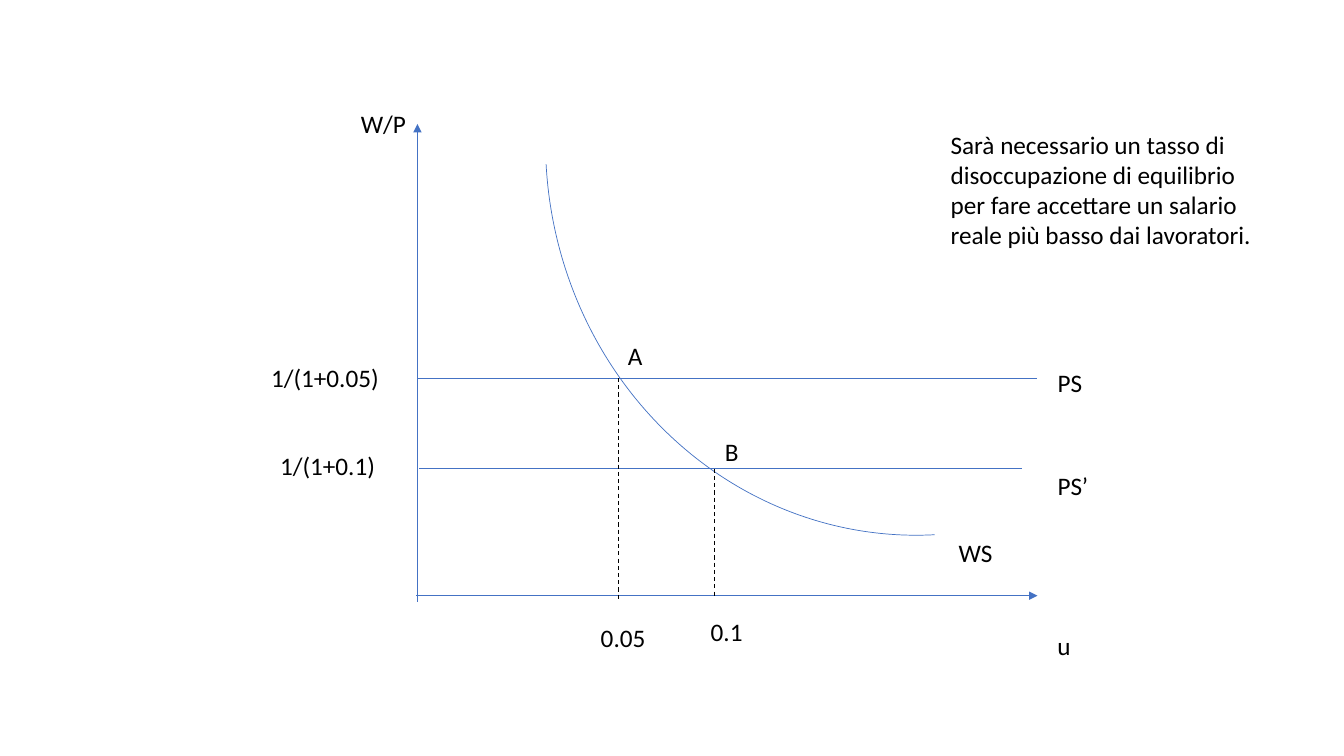
from dataclasses import dataclass

from lxml import etree
from pptx import Presentation
from pptx.dml.color import RGBColor
from pptx.enum.dml import MSO_LINE
from pptx.enum.shapes import MSO_CONNECTOR, MSO_SHAPE
from pptx.enum.text import MSO_AUTO_SIZE, PP_ALIGN
from pptx.oxml.ns import qn
from pptx.util import Pt

EMU_PER_PX = 9144
BLANK_LAYOUT = 6
STRAIGHT = MSO_CONNECTOR.STRAIGHT
ARC = MSO_SHAPE.ARC
DASH = MSO_LINE.DASH
FIT_TEXT = MSO_AUTO_SIZE.SHAPE_TO_FIT_TEXT
LEFT = PP_ALIGN.LEFT


@dataclass(frozen=True)
class Theme:
    font: str = "Calibri"
    text_size: float = 18
    text_color: str = "000000"
    curve_color: str = "4472C4"
    curve_width: float = 0.5
    guide_color: str = "000000"
    guide_width: float = 0.75


THEME = Theme()

AXIS_X, AXIS_Y = 414, 591
AXIS_END = 1029
PS_Y, NEW_PS_Y = 375, 465
POINT_A_X, POINT_B_X = 613, 709
CURVE_LABEL_X = 1039

LABELS = [
    ("W/P", 348, 103, 65),
    ("u", CURVE_LABEL_X, 620, 34),
    ("1/(1+0.05)", 259, 355, 128),
    ("1/(1+0.1)", 268, 442, 116),
    ("0.05", 586, 612, 65),
    ("0.1", 695, 607, 52),
    ("PS", CURVE_LABEL_X, 359, 45),
    ("PS’", CURVE_LABEL_X, 462, 51),
    ("WS", 941, 528, 54),
    ("A", POINT_A_X, 333, 35),
    ("B", POINT_B_X, 428, 34),
]
LABEL_HEIGHT = 40
COMMENT = (
    "Sarà necessario un tasso di disoccupazione di equilibrio "
    "per fare accettare un salario reale più basso dai lavoratori."
)


def px(*lengths):
    return [length * EMU_PER_PX for length in lengths]


def style_line(line, color, width):
    line.color.rgb = RGBColor.from_string(color)
    line.width = Pt(width)


def add_line(page, start, end, color=THEME.curve_color, width=THEME.curve_width):
    connector = page.shapes.add_connector(STRAIGHT, *px(*start, *end))
    style_line(connector.line, color, width)
    etree.SubElement(connector.element.spPr, qn("a:effectLst"))
    return connector


def add_axis(page, start, end):
    axis = add_line(page, start, end)
    outline = axis.element.spPr.find(qn("a:ln"))
    etree.SubElement(outline, qn("a:tailEnd"), type="triangle")


def add_guide(page, x, top, bottom):
    guide = add_line(page, (x, top), (x, bottom), THEME.guide_color, THEME.guide_width)
    guide.line.dash_style = DASH


def add_wage_curve(page, left, top, width, height, rotation):
    curve = page.shapes.add_shape(ARC, *px(left, top, width, height))
    curve.rotation = rotation
    curve.shadow.inherit = False
    curve.fill.background()
    style_line(curve.line, THEME.curve_color, THEME.curve_width)


def add_text(page, text, left, top, width, height=LABEL_HEIGHT, wrap=False):
    box = page.shapes.add_textbox(*px(left, top, width, height))
    frame = box.text_frame
    frame.word_wrap = wrap
    frame.auto_size = FIT_TEXT
    para = frame.paragraphs[0]
    para.text = text
    para.alignment = LEFT
    para.font.name = THEME.font
    para.font.size = Pt(THEME.text_size)
    para.font.color.rgb = RGBColor.from_string(THEME.text_color)


def main():
    deck = Presentation()
    deck.slide_width, deck.slide_height = px(1333, 750)
    page = deck.slides.add_slide(deck.slide_layouts[BLANK_LAYOUT])

    add_axis(page, (AXIS_X, 597), (AXIS_X, 123))
    add_axis(page, (413, AXIS_Y), (AXIS_END, AXIS_Y))
    add_line(page, (AXIS_X, PS_Y), (AXIS_END, PS_Y))
    add_line(page, (416, NEW_PS_Y), (1014, NEW_PS_Y))
    add_wage_curve(page, 541, -245, 730, 776, 176.9)
    add_guide(page, POINT_A_X, PS_Y, 597)
    add_guide(page, POINT_B_X, NEW_PS_Y, AXIS_Y)

    for label in LABELS:
        add_text(page, *label)
    add_text(page, COMMENT, 933, 123, 334, 131, wrap=True)

    deck.save("out.pptx")


if __name__ == "__main__":
    main()
